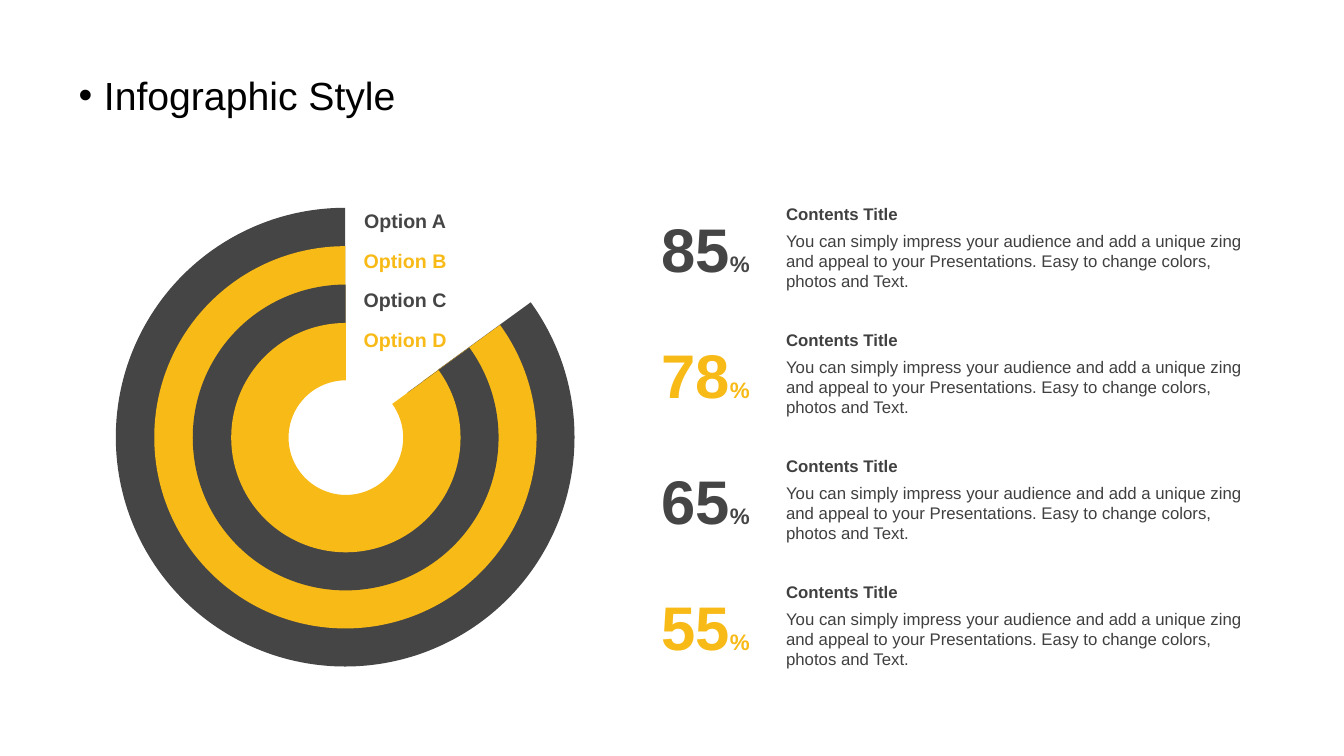
from pptx import Presentation
from pptx.chart.data import CategoryChartData
from pptx.dml.color import RGBColor
from pptx.enum.chart import XL_CHART_TYPE
from pptx.enum.text import MSO_ANCHOR, MSO_AUTO_SIZE, PP_ALIGN
from pptx.oxml import parse_xml
from pptx.oxml.ns import nsdecls
from pptx.util import Pt

FONT = "Arial"
DARK, YELLOW, BODY, BLACK = "454545", "F8BA16", "404040", "000000"
BLURB = ("You can simply impress your audience and add a unique zing and appeal "
         "to your Presentations. Easy to change colors, photos and Text.")
# Option, ring hole size in percent, figure, colour
OPTIONS = [
    ("Option A", 87, "85", DARK),
    ("Option B", 84, "78", YELLOW),
    ("Option C", 80, "65", DARK),
    ("Option D", 74, "55", YELLOW),
]
CENTER_X, CENTER_Y, OUTER_RING = 247.6, 313, 340
LABEL_STEP, ROW_STEP = 28.2, 90


def rgb(color):
    return RGBColor.from_string(color)


def style_font(font, size, color, bold=False):
    font.name = FONT
    font.size = Pt(size)
    font.bold = bold
    font.color.rgb = rgb(color)


def place_title(slide, text):
    title = slide.shapes.title
    title.left, title.top, title.width, title.height = Pt(49), Pt(51.1), Pt(911), Pt(56.9)
    frame = title.text_frame
    frame.text = text
    frame.vertical_anchor = MSO_ANCHOR.TOP
    frame.auto_size = MSO_AUTO_SIZE.NONE
    paragraph = frame.paragraphs[0]
    paragraph.alignment = PP_ALIGN.LEFT
    paragraph.line_spacing = 0.9
    paragraph.space_before = Pt(10)
    style_font(paragraph.runs[0].font, 28, BLACK)
    # Bullet with a hanging indent
    properties = paragraph._p.get_or_add_pPr()
    properties.set("marL", str(Pt(18)))
    properties.set("indent", str(-Pt(18)))
    properties.append(parse_xml(f'<a:buFont {nsdecls("a")} typeface="{FONT}"/>'))
    properties.append(parse_xml(f'<a:buChar {nsdecls("a")} char="•"/>'))


def add_text(shapes, box, runs, color, align=PP_ALIGN.LEFT, side_inset=7.2):
    """Add one paragraph; runs holds (text, size, bold) items."""
    frame = shapes.add_textbox(*map(Pt, box)).text_frame
    frame.word_wrap = True
    frame.auto_size = MSO_AUTO_SIZE.SHAPE_TO_FIT_TEXT
    frame.margin_left = frame.margin_right = Pt(side_inset)
    paragraph = frame.paragraphs[0]
    paragraph.alignment = align
    for text, size, bold in runs:
        run = paragraph.add_run()
        run.text = text
        style_font(run.font, size, color, bold)


def add_ring(slide, size, hole, color):
    data = CategoryChartData()
    data.categories = ["1", "2"]
    data.add_series("Series 1", (15, 85))
    box = (CENTER_X - size / 2, CENTER_Y - size / 2, size, size)
    chart = slide.shapes.add_chart(XL_CHART_TYPE.DOUGHNUT, *map(Pt, box), data).chart
    chart.has_legend = False
    chart.has_title = False
    style_font(chart.font, 18, BLACK)
    plot = chart.plots[0]
    plot.vary_by_categories = True
    gap, arc = (plot.series[0].points[i].format for i in range(2))
    gap.fill.background()
    arc.fill.solid()
    arc.fill.fore_color.rgb = rgb(color)
    for part in (gap, arc):
        part.line.fill.background()

    # Hole size, plot position and clear backgrounds
    space = chart._chartSpace
    space.xpath(".//c:holeSize")[0].set("val", str(hole))
    area = space.xpath("c:chart/c:plotArea")[0]
    for layout in area.xpath("c:layout"):
        area.remove(layout)
    position = "".join(f'<c:{key} val="{value}"/>' for key, value in (
        ("layoutTarget", "inner"), ("xMode", "edge"), ("yMode", "edge"),
        ("x", 0.015), ("y", 0.011), ("w", 0.964), ("h", 0.974)))
    area.insert(0, parse_xml(
        f'<c:layout {nsdecls("c")}><c:manualLayout>{position}</c:manualLayout></c:layout>'))
    clear = (f'<c:spPr {nsdecls("c", "a")}><a:noFill/>'
             '<a:ln><a:noFill/></a:ln></c:spPr>')
    area.append(parse_xml(clear))
    space.xpath("c:chart")[0].addnext(parse_xml(clear))


def add_content(slide, top):
    group = slide.shapes.add_group_shape()
    add_text(group.shapes, (553, top + 19.5, 349.2, 51), [(BLURB, 12, False)],
             BODY, side_inset=8.5)
    add_text(group.shapes, (553, top, 349.2, 21.8), [("Contents Title", 12, True)],
             BODY, side_inset=8.5)


def main():
    deck = Presentation()
    deck.slide_width, deck.slide_height = Pt(960), Pt(540)
    slide = deck.slides.add_slide(deck.slide_layouts[5])
    place_title(slide, "Infographic Style")

    # Rings, from the outside in
    for i, (_, hole, _, color) in enumerate(OPTIONS):
        add_ring(slide, OUTER_RING * (1 - i / 6), hole, color)

    # Ring labels, figures and descriptions
    for i, (option, _, figure, color) in enumerate(OPTIONS):
        add_text(slide.shapes, (247.7, 146 + i * LABEL_STEP, 83.5, 24.2),
                 [(option, 14, True)], color, PP_ALIGN.CENTER)
        add_text(slide.shapes, (455, 147 + i * ROW_STEP, 97.9, 60.6),
                 [(figure, 44, True), ("%", 16, True)], color, PP_ALIGN.CENTER)
        add_content(slide, 141.8 + i * ROW_STEP)

    deck.save("out.pptx")


if __name__ == "__main__":
    main()
